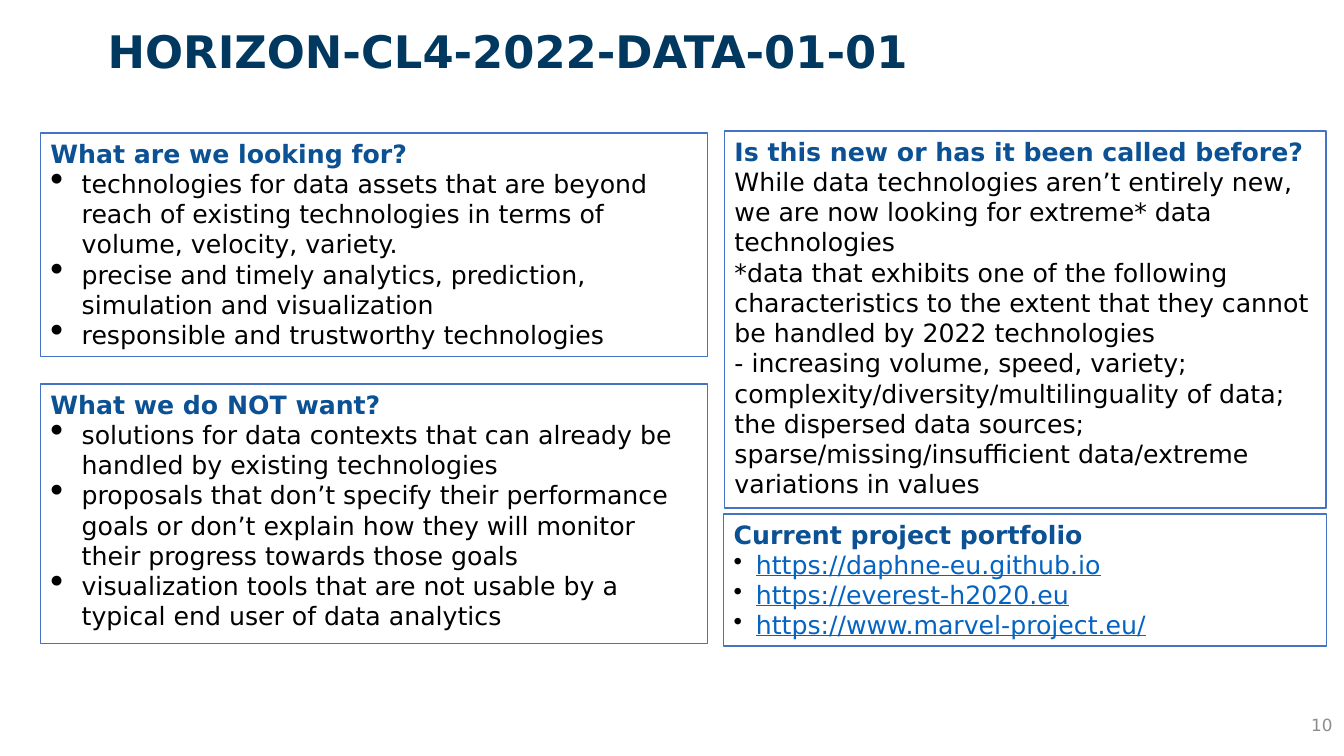
"""Build the HORIZON-CL4-2022-DATA-01-01 call summary slide."""
from dataclasses import dataclass
from typing import Optional

from lxml import etree
from pptx import Presentation
from pptx import util as u
from pptx.dml.color import RGBColor
from pptx.enum import shapes, text
from pptx.oxml import ns


@dataclass(frozen=True)
class Theme:
    """Colours, font and type sizes of the slide."""
    font: str = "DejaVu Sans"
    title: str = "003860"
    heading: str = "0C5193"
    body: str = "000000"
    link: str = "0563C1"
    border: str = "4472C4"
    number: str = "8C8C8C"
    title_pt: int = 32
    body_pt: int = 18
    number_pt: int = 12


@dataclass(frozen=True)
class Box:
    """Position and size in centimetres."""
    left: float
    top: float
    width: float
    height: float


@dataclass(frozen=True)
class Bullet:
    """Hanging indent in centimetres and bullet size in percent."""
    indent: float
    percent: int


@dataclass(frozen=True)
class Panel:
    """Bordered box with a heading and body lines."""
    box: Box
    heading: str
    lines: tuple[str, ...]
    bullet: Optional[Bullet] = None
    links: bool = False


THEME = Theme()
LARGE = Bullet(0.79, 150)
SMALL = Bullet(0.56, 100)

PANELS = (
    Panel(Box(1.02, 3.35, 16.81, 5.64), "What are we looking for?", (
        "technologies for data assets that are beyond reach of existing "
        "technologies in terms of volume, velocity, variety.",
        "precise and timely analytics, prediction, simulation and visualization",
        "responsible and trustworthy technologies",
    ), LARGE),
    Panel(Box(1.02, 9.68, 16.81, 6.53), "What we do NOT want?", (
        "solutions for data contexts that can already be handled by existing technologies",
        "proposals that don’t specify their performance goals or don’t explain "
        "how they will monitor their progress towards those goals",
        "visualization tools that are not usable by a typical end user of data analytics",
    ), LARGE),
    Panel(Box(18.26, 3.3, 15.16, 9.5), "Is this new or has it been called before?", (
        "While data technologies aren’t entirely new, we are now looking for "
        "extreme* data technologies",
        "*data that exhibits one of the following characteristics to the extent "
        "that they cannot be handled by 2022 technologies",
        "- increasing volume, speed, variety; complexity/diversity/multilinguality "
        "of data; the dispersed data sources; sparse/missing/insufficient "
        "data/extreme variations in values",
    )),
    Panel(Box(18.24, 12.95, 15.19, 3.33), "Current project portfolio", (
        "https://daphne-eu.github.io",
        "https://everest-h2020.eu",
        "https://www.marvel-project.eu/",
    ), SMALL, links=True),
)


def place(sp, box: Box) -> None:
    """Move and size a shape."""
    sp.left, sp.top = u.Cm(box.left), u.Cm(box.top)
    sp.width, sp.height = u.Cm(box.width), u.Cm(box.height)


def add_run(p, content: str, size: int, color: str,
            bold: bool = False, underline: bool = False) -> None:
    """Append one formatted run to a paragraph."""
    r = p.add_run()
    r.text = content
    r.font.name = THEME.font
    r.font.size = u.Pt(size)
    r.font.bold = bold
    r.font.underline = underline
    r.font.color.rgb = RGBColor.from_string(color)


def set_bullet(p, bullet: Bullet) -> None:
    """Give a paragraph a hanging bullet."""
    pPr = p._p.get_or_add_pPr()
    pPr.set("marL", str(u.Cm(bullet.indent)))
    pPr.set("indent", str(-u.Cm(bullet.indent)))
    etree.SubElement(pPr, ns.qn("a:buClr")).append(
        etree.Element(ns.qn("a:srgbClr"), val=THEME.body))
    etree.SubElement(pPr, ns.qn("a:buSzPct"), val=str(bullet.percent * 1000))
    etree.SubElement(pPr, ns.qn("a:buChar"), char="•")


def add_panel(s, panel: Panel) -> None:
    """Draw a bordered panel with its heading and lines."""
    sp = s.shapes.add_shape(shapes.MSO_SHAPE.RECTANGLE, 0, 0, 0, 0)
    place(sp, panel.box)
    sp.shadow.inherit = False
    sp.fill.background()
    sp.line.color.rgb = RGBColor.from_string(THEME.border)
    sp.line.width = u.Pt(1)
    tf = sp.text_frame
    tf.word_wrap = True
    tf.auto_size = text.MSO_AUTO_SIZE.SHAPE_TO_FIT_TEXT
    tf.vertical_anchor = text.MSO_ANCHOR.TOP
    p = tf.paragraphs[0]
    p.alignment = text.PP_ALIGN.LEFT
    add_run(p, panel.heading, THEME.body_pt, THEME.heading, bold=True)
    color = THEME.link if panel.links else THEME.body
    for line in panel.lines:
        p = tf.add_paragraph()
        p.alignment = text.PP_ALIGN.LEFT
        if panel.bullet:
            set_bullet(p, panel.bullet)
        add_run(p, line, THEME.body_pt, color, underline=panel.links)


def add_title(s, content: str, box: Box) -> None:
    """Place and format the title placeholder."""
    sp = s.shapes.title
    place(sp, box)
    tf = sp.text_frame
    tf.word_wrap = True
    tf.auto_size = text.MSO_AUTO_SIZE.NONE
    tf.vertical_anchor = text.MSO_ANCHOR.TOP
    p = tf.paragraphs[0]
    p.alignment = text.PP_ALIGN.LEFT
    add_run(p, content, THEME.title_pt, THEME.title, bold=True)


def add_number(s, content: str, box: Box) -> None:
    """Write the slide number at the lower right."""
    sp = s.shapes.add_textbox(0, 0, 0, 0)
    place(sp, box)
    tf = sp.text_frame
    tf.word_wrap = True
    tf.vertical_anchor = text.MSO_ANCHOR.MIDDLE
    p = tf.paragraphs[0]
    p.alignment = text.PP_ALIGN.RIGHT
    add_run(p, content, THEME.number_pt, THEME.number)


def main() -> None:
    """Build and save the slide."""
    prs = Presentation()
    prs.slide_width, prs.slide_height = u.Cm(33.87), u.Cm(19.05)
    s = prs.slides.add_slide(prs.slide_layouts[5])
    add_title(s, "HORIZON-CL4-2022-DATA-01-01", Box(2.46, 0.46, 21.77, 1.63))
    for panel in PANELS:
        add_panel(s, panel)
    add_number(s, "10", Box(26.21, 17.75, 7.62, 1.02))
    prs.save("out.pptx")


if __name__ == "__main__":
    main()
